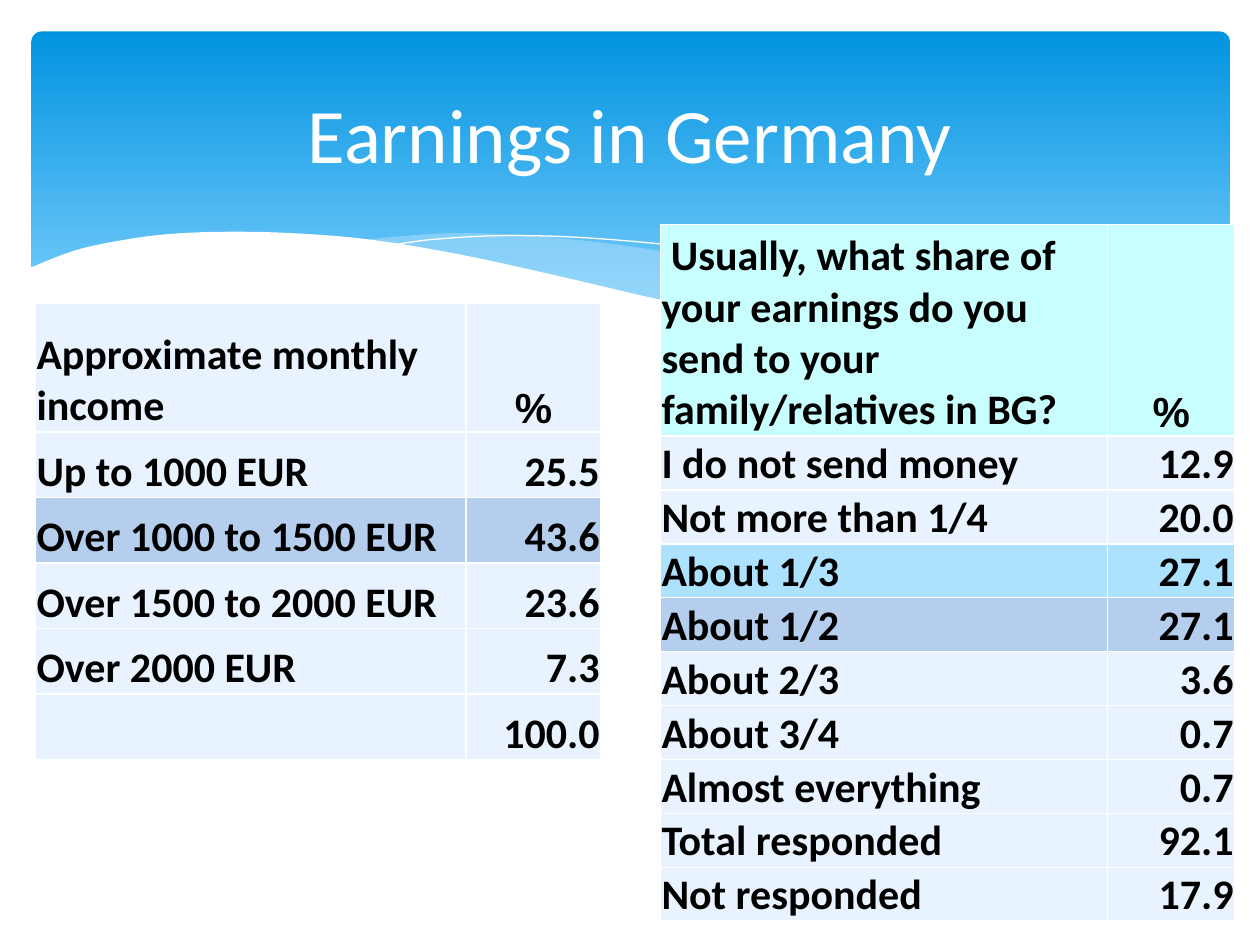
from dataclasses import dataclass
from typing import Optional

from lxml.etree import SubElement
from pptx import Presentation
from pptx.dml.color import RGBColor
from pptx.enum.shapes import MSO_SHAPE as Shape
from pptx.enum.text import MSO_ANCHOR as Anchor, PP_ALIGN as Align
from pptx.oxml.ns import qn
from pptx.util import Inches, Pt

# Slide grid: 100 columns by 75 rows of square cells.
COLUMNS, ROWS = 100, 75
CELL = Inches(10) // COLUMNS
COLORS = {
    "white": "FFFFFF", "black": "000000", "sky top": "0293E0", "sky bottom": "83D3FE",
    "wave": "C6E7FC", "pale": "E8F3FF", "accent": "B5CEED", "mint": "C8FEFD", "aqua": "ADE2FE",
}
Point = tuple[float, float]


@dataclass
class Wave:
    """A curve through knots, then straight corners if it is a filled area."""
    knots: list[Point]
    fill: Optional[str] = None
    opacity: int = 100
    back: Optional[list[Point]] = None
    corners: Optional[list[Point]] = None


@dataclass
class Row:
    label: str
    value: str
    color: str = "pale"


@dataclass
class DataTable:
    left: float
    top: float
    widths: tuple[float, float]
    header_height: float
    row_height: float
    rows: list[Row]


WAVES = [
    Wave([(97.55, 20), (92.1, 21), (86.1, 22.3), (77.9, 24.2), (66.1, 26.5)], "wave", 29,
         back=[(66.1, 26.5), (73.2, 27.4), (80.3, 27.8), (87.2, 27.4), (92.8, 26.3), (97.6, 24.7)]),
    Wave([(89.3, 27.3), (80.7, 26), (70.6, 24), (62.9, 22.2), (55.5, 20.5), (48.9, 19.4),
          (42, 18.7), (36.1, 18.5), (31.3, 18.8), (28.6, 19.1)], "wave", 40,
         back=[(28.6, 19.1), (36.2, 20.3), (44.9, 22.2), (53, 24), (61.8, 25.8),
               (69.5, 27), (77.3, 27.7), (83.8, 27.8), (89.3, 27.3)]),
    Wave([(30.9, 19.5), (34.4, 19), (40.1, 18.7), (46.9, 18.9), (55.6, 19.7),
          (63.6, 20.8), (72.7, 22.6), (83.1, 25.1), (90.7, 27.2)]),
    Wave([(61.3, 25.7), (67.2, 24.1), (74.8, 22.3), (83.6, 20.4), (91, 19.2), (97.5, 18.5)]),
    Wave([(97.7, 24.6), (93, 26.2), (87.5, 27.3), (80.9, 27.7), (72.6, 27.2), (62.6, 25.8),
          (52.9, 23.9), (44.7, 22), (36.5, 20.2), (29.2, 19), (23, 18.5), (17.7, 18.4),
          (13.2, 18.6), (9.5, 19.1), (5.9, 19.9), (2.3, 21.3)], "white",
         corners=[(2.3, 32.9), (97.7, 32.9)]),
]

TABLES = [
    DataTable(2.8, 24.1, (34.2, 10.7), 10.2, 5.2, [
        Row("Approximate monthly income", "%"),
        Row("Up to 1000 EUR", "25.5"),
        Row("Over 1000 to 1500 EUR", "43.6", "accent"),
        Row("Over 1500 to 2000 EUR", "23.6"),
        Row("Over 2000 EUR", "7.3"),
        Row("", "100.0"),
    ]),
    DataTable(52.4, 17.8, (35.5, 10.1), 16.8, 4.28, [
        Row(" Usually, what share of your earnings do you send to your family/relatives in BG?",
            "%", "mint"),
        Row("I do not send money", "12.9"),
        Row("Not more than 1/4", "20.0"),
        Row("About 1/3", "27.1", "aqua"),
        Row("About 1/2", "27.1", "accent"),
        Row("About 2/3", "3.6"),
        Row("About 3/4", "0.7"),
        Row("Almost everything", "0.7"),
        Row("Total responded", "92.1"),
        Row("Not responded", "17.9"),
    ]),
]


def rgb(name: str) -> RGBColor:
    return RGBColor.from_string(COLORS[name])


def cells(count: float) -> int:
    return round(count * CELL)


def smooth(knots: list[Point], steps: int = 5) -> list[Point]:
    """Sample a Catmull-Rom curve through the knots."""
    padded = [knots[0], *knots, knots[-1]]
    points = [knots[0]]
    for a, b, c, d in zip(padded, padded[1:], padded[2:], padded[3:]):
        for t in (step / steps for step in range(1, steps + 1)):
            points.append(tuple(
                (2 * q + (r - p) * t + (2 * p - 5 * q + 4 * r - s) * t ** 2
                 + (3 * q - p - 3 * r + s) * t ** 3) / 2
                for p, q, r, s in zip(a, b, c, d)))
    return points


def write(paragraph, text: str, size: int, color: str, align, font="Calibri", bold=False) -> None:
    paragraph.alignment = align
    run = paragraph.add_run()
    run.text = text
    run.font.size, run.font.name, run.font.bold = Pt(size), font, bold
    run.font.color.rgb = rgb(color)


def draw_sky(slide) -> None:
    shape = slide.shapes.add_shape(
        Shape.ROUNDED_RECTANGLE, cells(2.5), cells(2.5), cells(95.1), cells(27))
    shape.adjustments[0] = 0.03
    shape.shadow.inherit = False
    shape.line.fill.background()
    shape.fill.gradient()
    shape.fill.gradient_angle = 270
    for stop, color, position in zip(
            shape.fill.gradient_stops, ("sky top", "sky bottom"), (0, 0.9)):
        stop.color.rgb, stop.position = rgb(color), position


def draw_wave(slide, wave: Wave) -> None:
    outline = smooth(wave.knots)
    if wave.back:
        outline += smooth(wave.back)
    outline += wave.corners or []
    points = [(cells(x), cells(y)) for x, y in outline]
    builder = slide.shapes.build_freeform(*points[0], scale=1.0)
    builder.add_line_segments(points[1:], close=wave.fill is not None)
    shape = builder.convert_to_shape()
    shape.shadow.inherit = False
    if wave.fill is None:
        shape.fill.background()
        shape.line.color.rgb, shape.line.width = rgb("white"), Pt(0)
        return
    shape.line.fill.background()
    shape.fill.solid()
    shape.fill.fore_color.rgb = rgb(wave.fill)
    if wave.opacity < 100:
        color = next(shape.element.spPr.iter(qn("a:srgbClr")))
        SubElement(color, qn("a:alpha"), val=str(wave.opacity * 1000))


def draw_title(slide, text: str) -> None:
    frame = slide.shapes.add_textbox(cells(5), cells(3.7), cells(90), cells(13.7)).text_frame
    frame.word_wrap = True
    frame.vertical_anchor = Anchor.MIDDLE
    write(frame.paragraphs[0], text, 44, "white", Align.CENTER)


def style_cell(cell, color: str) -> None:
    cell.margin_left = cell.margin_right = cell.margin_top = Inches(0.01)
    cell.margin_bottom = 0
    cell.vertical_anchor = Anchor.BOTTOM
    for side in ("lnL", "lnR", "lnT", "lnB"):
        border = SubElement(cell._tc.get_or_add_tcPr(), qn(f"a:{side}"), w=str(Pt(1)))
        SubElement(SubElement(border, qn("a:solidFill")), qn("a:srgbClr"), val=COLORS["white"])
    cell.fill.solid()
    cell.fill.fore_color.rgb = rgb(color)


def draw_table(slide, data: DataTable) -> None:
    heights = [data.header_height] + [data.row_height] * (len(data.rows) - 1)
    table = slide.shapes.add_table(
        len(data.rows), 2, cells(data.left), cells(data.top),
        cells(sum(data.widths)), cells(sum(heights))).table
    table.first_row = table.horz_banding = False
    for column, width in zip(table.columns, data.widths):
        column.width = cells(width)
    for index, (row, height) in enumerate(zip(data.rows, heights)):
        table.rows[index].height = cells(height)
        value_style = (Align.RIGHT, "Calibri") if index else (Align.CENTER, "Arial")
        for cell, text, (align, font) in zip(
                table.rows[index].cells, (row.label, row.value),
                ((Align.LEFT, "Calibri"), value_style)):
            style_cell(cell, row.color)
            if text:
                write(cell.text_frame.paragraphs[0], text, 24, "black", align, font, bold=True)


def main() -> None:
    presentation = Presentation()
    presentation.slide_width, presentation.slide_height = cells(COLUMNS), cells(ROWS)
    slide = presentation.slides.add_slide(presentation.slide_layouts[6])
    draw_sky(slide)
    for wave in WAVES:
        draw_wave(slide, wave)
    draw_title(slide, "Earnings in Germany")
    for data in TABLES:
        draw_table(slide, data)
    presentation.save("out.pptx")


if __name__ == "__main__":
    main()
